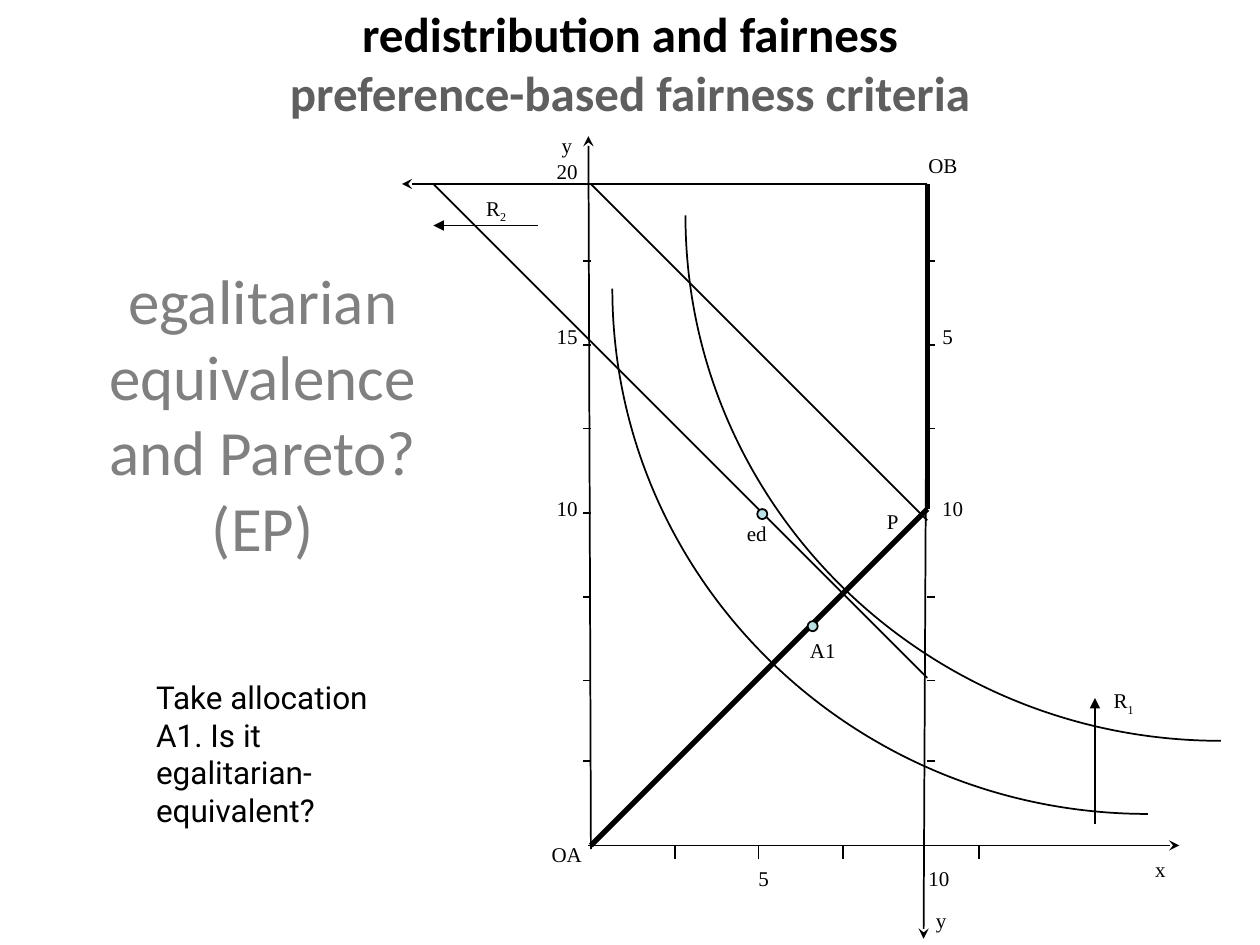
from dataclasses import dataclass

from lxml import etree
from pptx import Presentation
from pptx.dml.color import RGBColor
from pptx.enum.shapes import MSO_CONNECTOR, MSO_SHAPE
from pptx.enum.text import MSO_ANCHOR, MSO_AUTO_SIZE, PP_ALIGN
from pptx.oxml.ns import qn
from pptx.util import Inches, Pt

STRAIGHT = MSO_CONNECTOR.STRAIGHT
DOT = MSO_SHAPE.FLOWCHART_CONNECTOR
MIDDLE = MSO_ANCHOR.MIDDLE
TOP = MSO_ANCHOR.TOP
CENTER = PP_ALIGN.CENTER
LEFT = PP_ALIGN.LEFT
FIT_SHAPE = MSO_AUTO_SIZE.SHAPE_TO_FIT_TEXT
NO_FIT = MSO_AUTO_SIZE.NONE


@dataclass(frozen=True)
class Theme:
    black: RGBColor = RGBColor(0, 0, 0)
    heading_gray: RGBColor = RGBColor(0x5F, 0x5F, 0x5F)
    topic_gray: RGBColor = RGBColor(0x80, 0x80, 0x80)
    dot_fill: RGBColor = RGBColor(0xBB, 0xE0, 0xE3)
    heading_font: str = "Calibri"
    body_font: str = "Roboto"
    label_font: str = "Times New Roman"
    heading_size: Pt = Pt(28)
    topic_size: Pt = Pt(36)
    body_size: Pt = Pt(18)
    label_size: Pt = Pt(12)
    thin: Pt = Pt(1)
    thick: Pt = Pt(3)


THEME = Theme()

# Edges of the exchange box and length of its tick marks
BOX_LEFT, BOX_RIGHT, BOX_TOP, BOX_BOTTOM = 4.69, 7.36, 1.46, 6.71
Y_TICKS = (2.07, 2.74, 3.4, 4.07, 4.74, 5.4, 6.04)
X_TICKS = (5.36, 6.02, 6.69, 7.77)
Y_TICK_LENGTH, X_TICK_LENGTH = 0.06, 0.11
LABEL_HEIGHT = 0.3

ARROWS = (  # start, end, head
    ((4.67, BOX_BOTTOM), (9.36, BOX_BOTTOM), "stealth"),
    ((BOX_LEFT, 6.74), (4.67, 1.08), "stealth"),
    ((BOX_RIGHT, BOX_TOP), (7.33, 7.45), "stealth"),
    ((BOX_RIGHT, BOX_TOP), (3.19, BOX_TOP), "stealth"),
    ((4.27, 1.79), (3.44, 1.79), "triangle"),
    ((8.69, 6.54), (8.69, 5.54), "triangle"),
)
BUDGET_LINES = (
    ((BOX_RIGHT, 4.13), (BOX_LEFT, BOX_TOP)),
    ((BOX_RIGHT, 5.38), (3.44, BOX_TOP)),
)
EQUIVALENCE_PATH = ((BOX_LEFT, BOX_BOTTOM), (BOX_RIGHT, 4.04), (BOX_RIGHT, BOX_TOP))
CURVE_STARTS = ((5.44, 1.71), (4.86, 2.29))
CURVE_OFFSETS = ((0, 2.3), (1.9, 4.17), (4.25, 4.17))
ALLOCATIONS = ((6.01, 4.04), (6.41, 4.93))
LABELS = (  # text, subscript, left, top, width
    ("10", "", 4.32, 3.88, 0.37),
    ("15", "", 4.32, 2.52, 0.37),
    ("20", "", 4.32, 1.21, 0.37),
    ("10", "", 7.27, 6.82, 0.44),
    ("5", "", 5.92, 6.82, 0.44),
    ("10", "", 7.38, 3.88, 0.37),
    ("5", "", 7.38, 2.52, 0.28),
    ("P", "", 6.94, 3.99, 0.29),
    ("y", "", 4.36, 1, 0.28),
    ("x", "", 9.07, 6.75, 0.28),
    ("y", "", 7.33, 7.15, 0.28),
    ("R", "2", 3.76, 1.5, 0.37),
    ("R", "1", 8.74, 5.41, 0.37),
    ("OB", "", 7.27, 1.16, 0.43),
    ("OA", "", 4.28, 6.63, 0.44),
    ("ed", "", 5.83, 4.08, 0.36),
    ("A1", "", 6.33, 5.01, 0.41),
)


def set_attributes(target, values):
    for name, value in values.items():
        setattr(target, name, value)


def add_run(paragraph, text, font_format, color=THEME.black):
    run = paragraph.add_run()
    run.text = text
    set_attributes(run.font, font_format)
    run.font.color.rgb = color
    return run


def add_text_box(slide, box, wrap=True, auto_size=FIT_SHAPE, anchor=TOP, align=LEFT):
    """Add an empty text box and return its paragraph."""
    frame = slide.shapes.add_textbox(*map(Inches, box)).text_frame
    set_attributes(frame, {"word_wrap": wrap, "auto_size": auto_size, "vertical_anchor": anchor})
    paragraph = frame.paragraphs[0]
    paragraph.alignment = align
    return paragraph


def add_heading(slide, box, lines, font_format):
    """Add centred lines, each a pair of text and colour."""
    paragraph = add_text_box(slide, box, auto_size=NO_FIT, anchor=MIDDLE, align=CENTER)
    for index, (text, color) in enumerate(lines):
        if index:
            paragraph.add_line_break()
        add_run(paragraph, text, font_format, color)


def add_label(slide, text, subscript, left, top, width):
    font_format = {"name": THEME.label_font, "size": THEME.label_size}
    paragraph = add_text_box(slide, (left, top, width, LABEL_HEIGHT), wrap=False)
    add_run(paragraph, text, font_format)
    if subscript:
        run = add_run(paragraph, subscript, font_format)
        run.font._element.set("baseline", "-25000")


def style_line(shape, width):
    shape.line.color.rgb = THEME.black
    shape.line.width = width


def add_line(slide, start, end, width=THEME.thin, head=None):
    line = slide.shapes.add_connector(STRAIGHT, *map(Inches, (*start, *end)))
    style_line(line, width)
    if head:
        etree.SubElement(line.line._get_or_add_ln(), qn("a:tailEnd"), type=head)
    etree.SubElement(line._element.spPr, qn("a:effectLst"))


def add_indifference_curve(slide, start):
    """Draw one cubic curve from start through CURVE_OFFSETS."""
    left, top = start
    points = [(Inches(left + x), Inches(top + y)) for x, y in CURVE_OFFSETS]
    builder = slide.shapes.build_freeform(Inches(left), Inches(top))
    builder.add_line_segments(points, close=False)
    curve = builder.convert_to_shape()
    curve.shadow.inherit = False
    curve.fill.background()
    style_line(curve, THEME.thin)
    segments = list(curve._element.iter(qn("a:lnTo")))
    bezier = etree.SubElement(segments[0].getparent(), qn("a:cubicBezTo"))
    for segment in segments:
        bezier.append(segment[0])
        segment.getparent().remove(segment)


def add_allocation(slide, left, top, size=0.08):
    dot = slide.shapes.add_shape(DOT, *map(Inches, (left, top, size, size)))
    dot.shadow.inherit = False
    dot.fill.solid()
    dot.fill.fore_color.rgb = THEME.dot_fill
    style_line(dot, THEME.thin)


def add_ticks(slide):
    for y in Y_TICKS:
        add_line(slide, (BOX_LEFT - Y_TICK_LENGTH, y), (BOX_LEFT, y))
        if y != 4.07:  # the thick path already marks this value on the right
            add_line(slide, (BOX_RIGHT, y), (BOX_RIGHT + Y_TICK_LENGTH, y))
    for x in X_TICKS:
        add_line(slide, (x, BOX_BOTTOM + X_TICK_LENGTH), (x, BOX_BOTTOM))


def add_diagram(slide):
    add_ticks(slide)
    for start, end, head in ARROWS:
        add_line(slide, start, end, head=head)
    for start, end in BUDGET_LINES:
        add_line(slide, start, end)
    for start, end in zip(EQUIVALENCE_PATH, EQUIVALENCE_PATH[1:]):
        add_line(slide, start, end, THEME.thick)
    for start in CURVE_STARTS:
        add_indifference_curve(slide, start)
    for position in ALLOCATIONS:
        add_allocation(slide, *position)
    for label in LABELS:
        add_label(slide, *label)


def main():
    presentation = Presentation()
    presentation.slide_width, presentation.slide_height = Inches(10), Inches(7.5)
    slide = presentation.slides.add_slide(presentation.slide_layouts[6])
    add_heading(
        slide, (0.35, 1.7, 3.47, 3.15),
        (("egalitarian equivalence and Pareto?", THEME.topic_gray), ("(EP)", THEME.topic_gray)),
        {"name": THEME.heading_font, "size": THEME.topic_size})
    add_diagram(slide)
    add_heading(
        slide, (0.5, -0.13, 9, 1.25),
        (("redistribution and fairness", THEME.black),
         ("preference-based fairness criteria", THEME.heading_gray)),
        {"name": THEME.heading_font, "size": THEME.heading_size, "bold": True})
    question = add_text_box(slide, (1.14, 5.33, 2.28, 1.01))
    add_run(question, "Take allocation A1. Is it egalitarian-equivalent?",
            {"name": THEME.body_font, "size": THEME.body_size})
    presentation.save("out.pptx")


if __name__ == "__main__":
    main()
